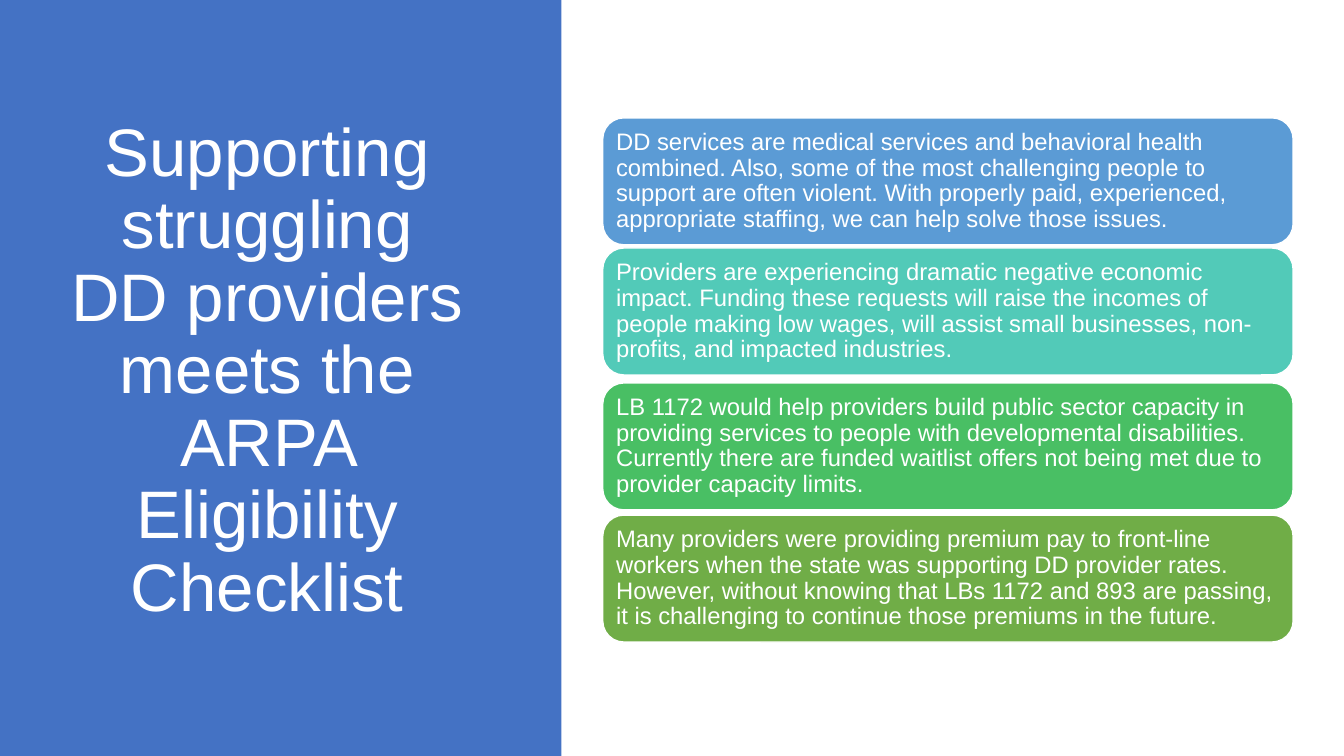
from dataclasses import dataclass

from pptx import Presentation
from pptx.dml import color
from pptx.enum import shapes, text
from pptx import util as u


@dataclass(frozen=True)
class Theme:
    """Colours and type sizes of the slide."""
    font: str = "Arial"
    ink: str = "FFFFFF"
    panel: str = "4472C4"
    cards: tuple = ("5B9BD5", "52CAB8", "49BF64", "70AD47")
    title_size: int = 48
    card_size: int = 17


def write(frame, words, *, size, font, ink, align, inset):
    """Fill a text frame with one formatted, vertically centred paragraph."""
    frame.word_wrap = True
    frame.auto_size = text.MSO_AUTO_SIZE.NONE
    frame.vertical_anchor = text.MSO_ANCHOR.MIDDLE
    frame.margin_left = frame.margin_right = u.Cm(inset)
    frame.margin_top = frame.margin_bottom = u.Cm(inset)
    paragraph = frame.paragraphs[0]
    paragraph.alignment = align
    paragraph.line_spacing = 0.9
    run = paragraph.add_run()
    run.text = words
    run.font.size = u.Pt(size)
    run.font.name = font
    run.font.color.rgb = color.RGBColor.from_string(ink)


class Painter:
    """Draws styled elements on the current slide."""

    def __init__(self, slide, theme):
        """Keep the slide and its theme."""
        self.slide = slide
        self.theme = theme

    def block(self, kind, left, top, width, height, fill):
        """Add a filled shape without shadow or outline."""
        block = self.slide.shapes.add_shape(
            kind, u.Cm(left), u.Cm(top), u.Cm(width), u.Cm(height))
        block.shadow.inherit = False
        block.fill.solid()
        block.fill.fore_color.rgb = color.RGBColor.from_string(fill)
        block.line.fill.background()
        return block

    def panel(self, width, height):
        """Add the coloured panel at the left edge."""
        self.block(shapes.MSO_SHAPE.RECTANGLE, 0, 0, width, height, self.theme.panel)

    def title(self, words, left, top, width, height):
        """Add the centred title."""
        title = self.slide.shapes.add_textbox(
            u.Cm(left), u.Cm(top), u.Cm(width), u.Cm(height))
        write(title.text_frame, words, size=self.theme.title_size, font=self.theme.font,
              ink=self.theme.ink, align=text.PP_ALIGN.CENTER, inset=0.25)

    def card(self, words, top, fill):
        """Add one rounded checklist card."""
        card = self.block(shapes.MSO_SHAPE.ROUNDED_RECTANGLE, 15.19, top, 17.4, 3.2, fill)
        card.line.color.rgb = color.RGBColor.from_string(self.theme.ink)
        card.line.width = u.Pt(1)
        write(card.text_frame, words, size=self.theme.card_size, font=self.theme.font,
              ink=self.theme.ink, align=text.PP_ALIGN.LEFT, inset=0.18)


CHECKLIST = (
    (2.97, "DD services are medical services and behavioral health combined. "
           "Also, some of the most challenging people to support are often violent. "
           "With properly paid, experienced, appropriate staffing, "
           "we can help solve those issues."),
    (6.25, "Providers are experiencing dramatic negative economic impact. "
           "Funding these requests will raise the incomes of people making low wages, "
           "will assist small businesses, non-profits, and impacted industries."),
    (9.65, "LB 1172 would help providers build public sector capacity in providing "
           "services to people with developmental disabilities. Currently there are "
           "funded waitlist offers not being met due to provider capacity limits."),
    (12.98, "Many providers were providing premium pay to front-line workers when the "
            "state was supporting DD provider rates. However, without knowing that LBs "
            "1172 and 893 are passing, it is challenging to continue those premiums "
            "in the future."),
)


def main():
    """Build and save the slide."""
    deck = Presentation()
    deck.slide_width, deck.slide_height = u.Cm(33.87), u.Cm(19.05)
    painter = Painter(deck.slides.add_slide(deck.slide_layouts[6]), Theme())
    painter.panel(14.15, 19.05)
    for (top, words), fill in zip(CHECKLIST, painter.theme.cards):
        painter.card(words, top, fill)
    painter.title("Supporting struggling DD providers meets the ARPA Eligibility Checklist",
                  1.45, 1.73, 10.57, 15.29)
    deck.save("out.pptx")


if __name__ == "__main__":
    main()
